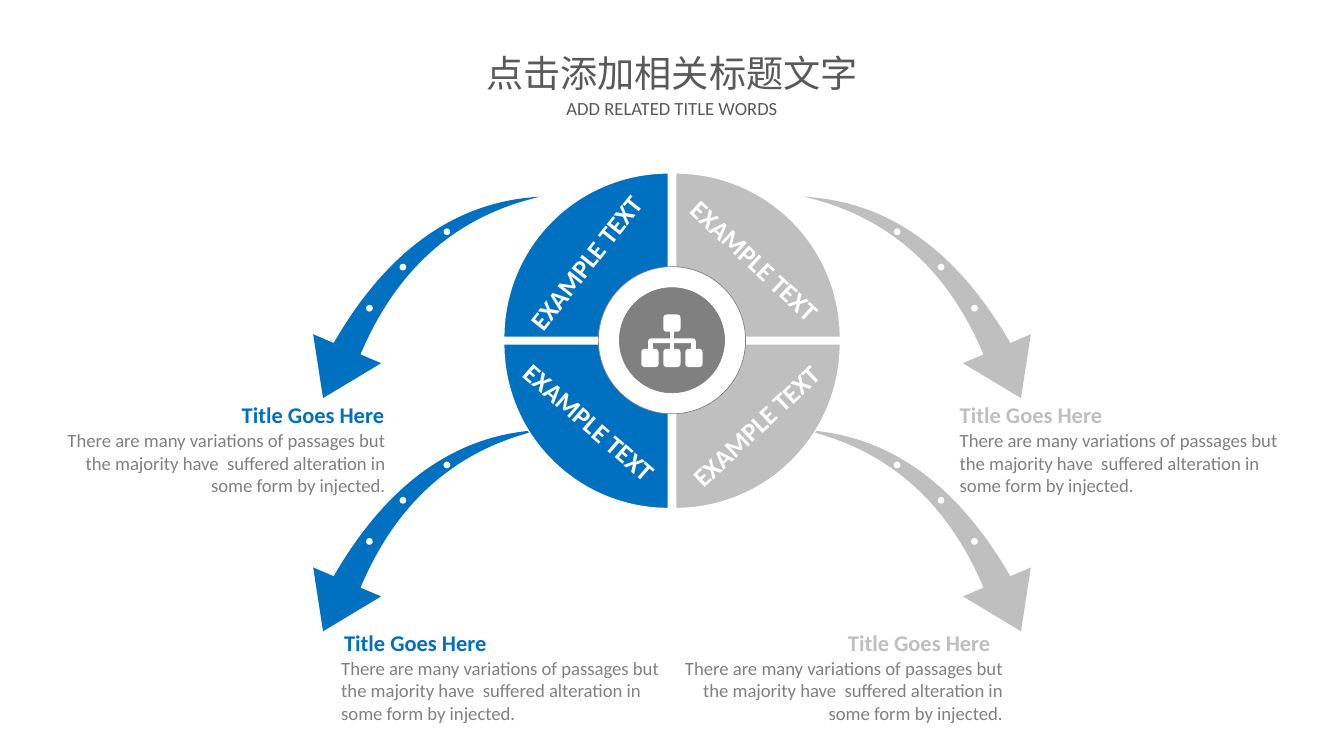
"""Build a four-part wheel slide with swoosh arrows and captions."""
from pptx import Presentation
from pptx.dml.color import RGBColor
from pptx.enum.shapes import MSO_SHAPE
from pptx.enum.text import MSO_AUTO_SIZE, PP_ALIGN
from pptx.util import Inches, Pt

BLUE = RGBColor(0x00, 0x70, 0xC0)
SILVER = RGBColor(0xBF, 0xBF, 0xBF)
GRAY = RGBColor(0x80, 0x80, 0x80)
DARK = RGBColor(0x59, 0x59, 0x59)
WHITE = RGBColor(0xFF, 0xFF, 0xFF)
OVAL, WEDGE, SWOOSH = MSO_SHAPE.OVAL, MSO_SHAPE.PIE_WEDGE, MSO_SHAPE.SWOOSH_ARROW
LEFT, CENTER, RIGHT = PP_ALIGN.LEFT, PP_ALIGN.CENTER, PP_ALIGN.RIGHT
GROW = MSO_AUTO_SIZE.SHAPE_TO_FIT_TEXT

WIDTH, HEIGHT = 14.06, 7.91
HUB_X, HUB_Y = 7.03, 3.56
CORNER = 0.04
PASSAGE = ("There are many variations of passages but the majority have  "
           "suffered alteration in some form by injected.")
ARROW_DOTS = [(9.35, 0.25), (9.81, 0.62), (10.16, 1.05)]
CAPTIONS = [
    (10.04, 4.2, 1.56, LEFT, 10.04, LEFT, SILVER),
    (2.5, 4.2, 1.52, RIGHT, 0.59, RIGHT, BLUE),
    (8.87, 6.58, 1.62, LEFT, 7.05, RIGHT, SILVER),
    (3.57, 6.58, 1.52, RIGHT, 3.57, LEFT, BLUE),
]
WEDGES = [(5.27, 1.81, BLUE), (7.07, 1.81, SILVER),
          (7.07, 3.6, SILVER), (5.27, 3.6, BLUE)]
WEDGE_LABELS = [(5.13, 2.53, 308.3), (6.9, 2.51, 43),
                (5.17, 4.2, 40.9), (6.91, 4.24, 316.7)]
CHART_HALF = [
    (0.09, 3.29, True), (0.09, 3.47, True), (0.02, 3.47, False),
    (0.02, 3.54, False), (0.25, 3.54, True), (0.25, 3.65, False),
    (0.32, 3.65, True), (0.32, 3.84, True), (0.14, 3.84, True),
    (0.14, 3.65, True), (0.2, 3.65, False), (0.2, 3.59, False),
    (0.02, 3.59, False), (0.02, 3.65, False), (0.09, 3.65, True),
    (0.09, 3.84, True),
]


def rounded(corners):
    """Return outline points with the marked corners rounded."""
    points = []
    for i, (x, y, is_round) in enumerate(corners):
        if not is_round:
            points.append((x, y))
            continue
        ends = []
        for nx, ny, _ in (corners[i - 1], corners[(i + 1) % len(corners)]):
            share = CORNER / (abs(nx - x) + abs(ny - y))
            ends.append((x + (nx - x) * share, y + (ny - y) * share))
        (ax, ay), (bx, by) = ends
        for step in range(6):
            t = step / 5
            a, c, b = (1 - t) ** 2, 2 * t * (1 - t), t ** 2
            points.append((a * ax + c * x + b * bx, a * ay + c * y + b * by))
    return points


class Canvas:
    """Hold the font and the slide that is being filled."""

    def __init__(self, slide, font):
        self.slide, self.font = slide, font
        self.shapes = slide.shapes

    def group(self):
        """Send the next elements to a new group."""
        self.shapes = self.slide.shapes.add_group_shape().shapes

    def ungroup(self):
        """Send the next elements straight to the slide."""
        self.shapes = self.slide.shapes

    def paint(self, shape, fill, line=None, weight=1):
        """Give a shape its fill and outline."""
        shape.shadow.inherit = False
        shape.fill.solid()
        shape.fill.fore_color.rgb = fill
        if line is None:
            shape.line.fill.background()
        else:
            shape.line.color.rgb = line
            shape.line.width = Pt(weight)

    def shape(self, kind, x, y, w, h, fill, line=None, weight=1, turn=0, flip=False):
        """Add a preset shape."""
        added = self.shapes.add_shape(kind, Inches(x), Inches(y), Inches(w), Inches(h))
        self.paint(added, fill, line, weight)
        added.rotation = turn
        if flip:
            added._element.spPr.xfrm.set("flipH", "1")
        return added

    def outline(self, points, fill):
        """Add a closed freeform."""
        start, *rest = [(Inches(x), Inches(y)) for x, y in points]
        builder = self.shapes.build_freeform(*start)
        builder.add_line_segments(rest, close=True)
        self.paint(builder.convert_to_shape(), fill)

    def text(self, words, x, y, w, h, size, color, bold=False, align=LEFT,
             turn=0, wrap=True, inset=(0.1, 0.05)):
        """Add a text box."""
        box = self.shapes.add_textbox(Inches(x), Inches(y), Inches(w), Inches(h))
        box.rotation = turn
        frame = box.text_frame
        frame.word_wrap, frame.auto_size = wrap, GROW
        frame.margin_left = frame.margin_right = Inches(inset[0])
        frame.margin_top = frame.margin_bottom = Inches(inset[1])
        paragraph = frame.paragraphs[0]
        paragraph.alignment = align
        run = paragraph.add_run()
        run.text = words
        run.font.name, run.font.size, run.font.bold = self.font, Pt(size), bold
        run.font.color.rgb = color

    def arrow(self, top, mirrored):
        """Add a swoosh arrow with its three dots."""
        def place(x, w):
            return WIDTH - x - w if mirrored else x

        self.group()
        swoosh = self.shape(SWOOSH, place(8.35, 2.67), top, 2.67, 1.86,
                            BLUE if mirrored else SILVER,
                            turn=286.7 if mirrored else 73.3, flip=mirrored)
        swoosh.adjustments[0], swoosh.adjustments[1] = 0.163, 0.314
        for x, drop in ARROW_DOTS:
            self.shape(OVAL, place(x, 0.07), top + drop, 0.07, 0.07, WHITE)
        self.ungroup()

    def caption(self, x, y, w, title_align, body_x, body_align, color):
        """Add a heading with its passage."""
        self.group()
        self.text("Title Goes Here", x, y, w, 0.28, 16.9, color, bold=True,
                  align=title_align, inset=(0, 0))
        self.text(PASSAGE, body_x, y + 0.29, 3.44, 0.71, 14.1, GRAY,
                  align=body_align, inset=(0, 0))
        self.ungroup()

    def hub(self):
        """Add the centre rings and the hierarchy icon."""
        self.group()
        for size, fill in ((1.54, WHITE), (1.1, GRAY)):
            self.shape(OVAL, HUB_X - size / 2, HUB_Y - size / 2, size, size,
                       fill, line=GRAY, weight=0.5)
        right = [(HUB_X + dx, y, r) for dx, y, r in CHART_HALF]
        left = [(HUB_X - dx, y, r) for dx, y, r in reversed(CHART_HALF)]
        self.outline(rounded(right + left), WHITE)
        self.ungroup()


def main():
    """Build and save the slide."""
    deck = Presentation()
    deck.slide_width, deck.slide_height = Inches(WIDTH), Inches(HEIGHT)
    canvas = Canvas(deck.slides.add_slide(deck.slide_layouts[6]), "Calibri")

    for top in (4.58, 2.14):
        for mirrored in (False, True):
            canvas.arrow(top, mirrored)
    for caption in CAPTIONS:
        canvas.caption(*caption)
    for quarter, (x, y, color) in enumerate(WEDGES):
        canvas.shape(WEDGE, x, y, 1.72, 1.72, color, line=WHITE, turn=90 * quarter)
    canvas.hub()
    for x, y, turn in WEDGE_LABELS:
        canvas.text("EXAMPLE TEXT", x, y, 1.99, 0.43, 19.7, WHITE, bold=True,
                    align=CENTER, turn=turn)
    canvas.text("点击添加相关标题文字", 4.96, 0.48, 4.14, 0.58, 28, DARK,
                align=CENTER, wrap=False, inset=(0.11, 0.05))
    canvas.text("ADD RELATED TITLE WORDS", 5.79, 0.97, 2.48, 0.34, 14, DARK,
                align=CENTER, wrap=False, inset=(0.11, 0.05))
    deck.save("out.pptx")


if __name__ == "__main__":
    main()
